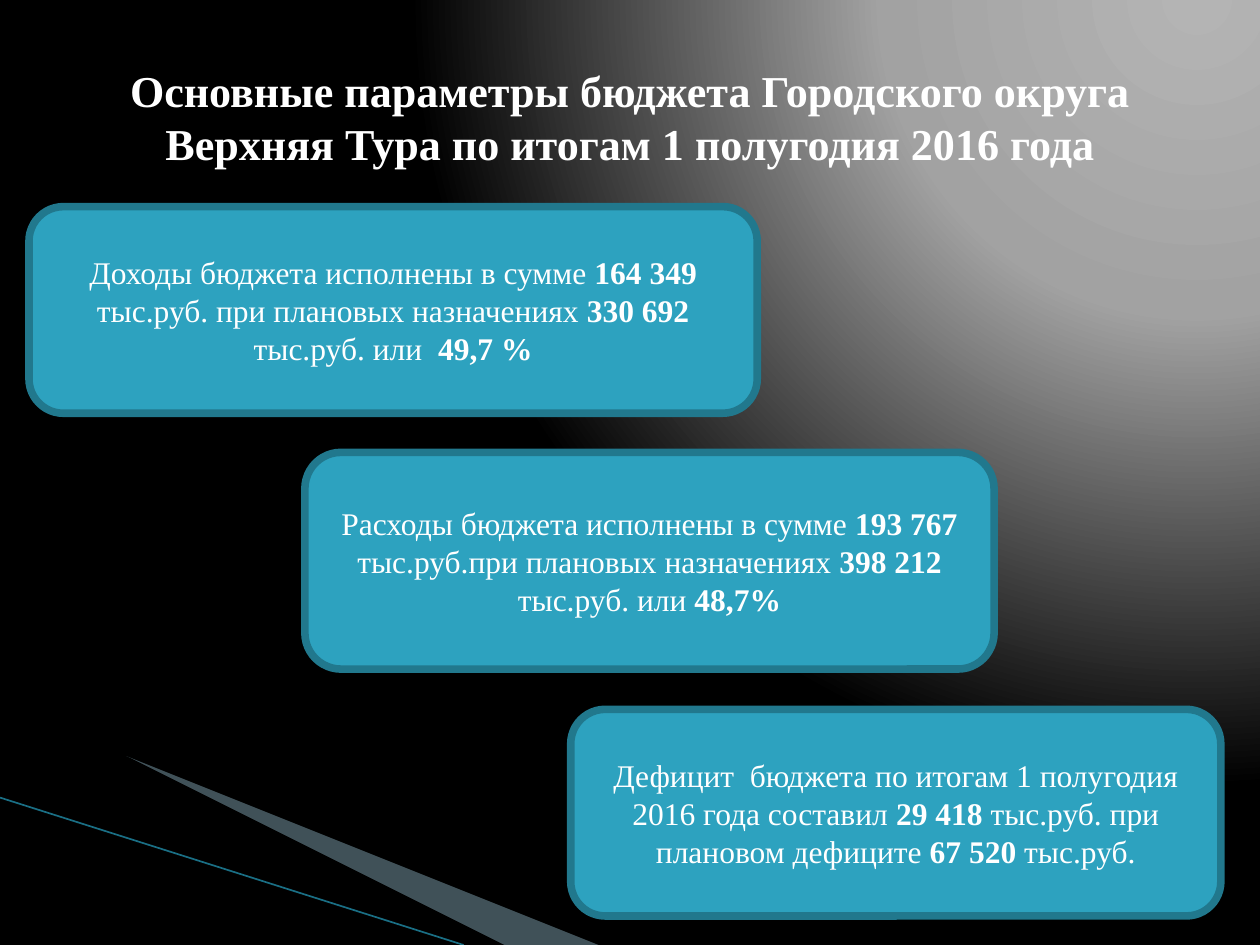
from lxml import etree
from pptx import Presentation
from pptx.dml.color import RGBColor
from pptx.enum.shapes import MSO_CONNECTOR, MSO_SHAPE
from pptx.enum.text import MSO_ANCHOR, PP_ALIGN
from pptx.oxml import parse_xml
from pptx.oxml.ns import nsdecls, qn
from pptx.util import Inches, Pt

ROUNDED = MSO_SHAPE.ROUNDED_RECTANGLE
STRAIGHT = MSO_CONNECTOR.STRAIGHT
MIDDLE = MSO_ANCHOR.MIDDLE
CENTER = PP_ALIGN.CENTER

WHITE = RGBColor(0xFF, 0xFF, 0xFF)
BLACK = RGBColor(0, 0, 0)
TEAL = RGBColor(0x2D, 0xA2, 0xBF)
DARK_TEAL = RGBColor(0x21, 0x78, 0x8D)
RAY_TEAL = RGBColor(0x1A, 0x6F, 0x85)
PALE_BLUE = RGBColor(0xA0, 0xCB, 0xDC)
FONT = "Times New Roman"

SLIDE_W, SLIDE_H = 10, 7.5
BACKGROUND_STOPS = [(0, "B4B4B4"), (40, "A2A2A2"), (100, "000000")]
GLOW_CENTER = {"l": 95, "t": -106, "r": 5, "b": 206}

TITLE = "Основные параметры бюджета Городского округа Верхняя Тура по итогам 1 полугодия 2016 года"
TITLE_BOX = (0.5, 0.3, 9, 1.25)

# Box, then text pieces: every second piece is a bold figure.
BUDGET_CARDS = [
    ((0.23, 1.64, 5.78, 1.64),
     ["Доходы бюджета исполнены в сумме ", "164 349 ",
      "тыс.руб. при плановых назначениях ", "330 692 ",
      "тыс.руб. или  ", "49,7 %"]),
    ((2.42, 3.59, 5.47, 1.72),
     ["Расходы бюджета исполнены в сумме ", "193 767 ",
      "тыс.руб.при плановых назначениях ", "398 212 ",
      "тыс.руб. или ", "48,7%"]),
    ((4.53, 5.63, 5.16, 1.64),
     ["Дефицит  бюджета по итогам 1 полугодия 2016 года составил ", "29 418 ",
      "тыс.руб. при плановом дефиците ", "67 520 ",
      "тыс.руб."]),
]

# Outline, colour, opacity in percent
WEDGES = [
    ([(0.55, 6.5), (5.92, SLIDE_H), (4.54, SLIDE_H)], PALE_BLUE, 40),
    ([(0.53, 6.49), (4.54, SLIDE_H), (3.7, SLIDE_H)], BLACK, 100),
]
RAY = (0, 6.33, 3.68, SLIDE_H)


def paint_background(slide):
    stops = "".join(
        f'<a:gs pos="{pos * 1000}"><a:srgbClr val="{color}"/></a:gs>'
        for pos, color in BACKGROUND_STOPS)
    rect = " ".join(f'{side}="{share * 1000}"' for side, share in GLOW_CENTER.items())
    slide.element.cSld.insert(0, parse_xml(
        f'<p:bg {nsdecls("p", "a")}><p:bgPr><a:gradFill rotWithShape="1">'
        f'<a:gsLst>{stops}</a:gsLst><a:path path="circle"><a:fillToRect {rect}/></a:path>'
        f'</a:gradFill><a:effectLst/></p:bgPr></p:bg>'))


def add_wedge(slide, points, color, opacity):
    builder = slide.shapes.build_freeform(*points[0], scale=Inches(1))
    builder.add_line_segments(points[1:])
    wedge = builder.convert_to_shape()
    wedge.shadow.inherit = False
    wedge.fill.solid()
    wedge.fill.fore_color.rgb = color
    wedge.line.fill.background()
    if opacity < 100:
        fill_color = wedge.element.spPr.find(qn("a:solidFill"))[0]
        etree.SubElement(fill_color, qn("a:alpha"), val=str(opacity * 1000))


def add_ray(slide):
    ray = slide.shapes.add_connector(STRAIGHT, *map(Inches, RAY))
    ray.line.color.rgb = RAY_TEAL
    ray.line.width = Pt(0.95)
    etree.SubElement(ray.element.spPr, qn("a:effectLst"))


def write_text(shape, pieces, size):
    """Write (text, bold) pieces as one centred paragraph."""
    frame = shape.text_frame
    frame.word_wrap = True
    frame.vertical_anchor = MIDDLE
    paragraph = frame.paragraphs[0]
    paragraph.alignment = CENTER
    for text, bold in pieces:
        run = paragraph.add_run()
        run.text = text
        for name, value in {"name": FONT, "size": Pt(size), "bold": bold}.items():
            setattr(run.font, name, value)
        run.font.color.rgb = WHITE


def add_card(slide, box, pieces):
    card = slide.shapes.add_shape(ROUNDED, *map(Inches, box))
    card.shadow.inherit = False
    card.fill.solid()
    card.fill.fore_color.rgb = TEAL
    card.line.color.rgb = DARK_TEAL
    card.line.width = Pt(4.33)
    write_text(card, [(text, i % 2 == 1) for i, text in enumerate(pieces)], 18)


def main():
    deck = Presentation()
    deck.slide_width, deck.slide_height = Inches(SLIDE_W), Inches(SLIDE_H)
    slide = deck.slides.add_slide(deck.slide_layouts[6])
    paint_background(slide)
    for wedge in WEDGES:
        add_wedge(slide, *wedge)
    add_ray(slide)
    title = slide.shapes.add_textbox(*map(Inches, TITLE_BOX))
    write_text(title, [(TITLE, True)], 25.2)
    for box, pieces in BUDGET_CARDS:
        add_card(slide, box, pieces)
    deck.save("out.pptx")


if __name__ == "__main__":
    main()
